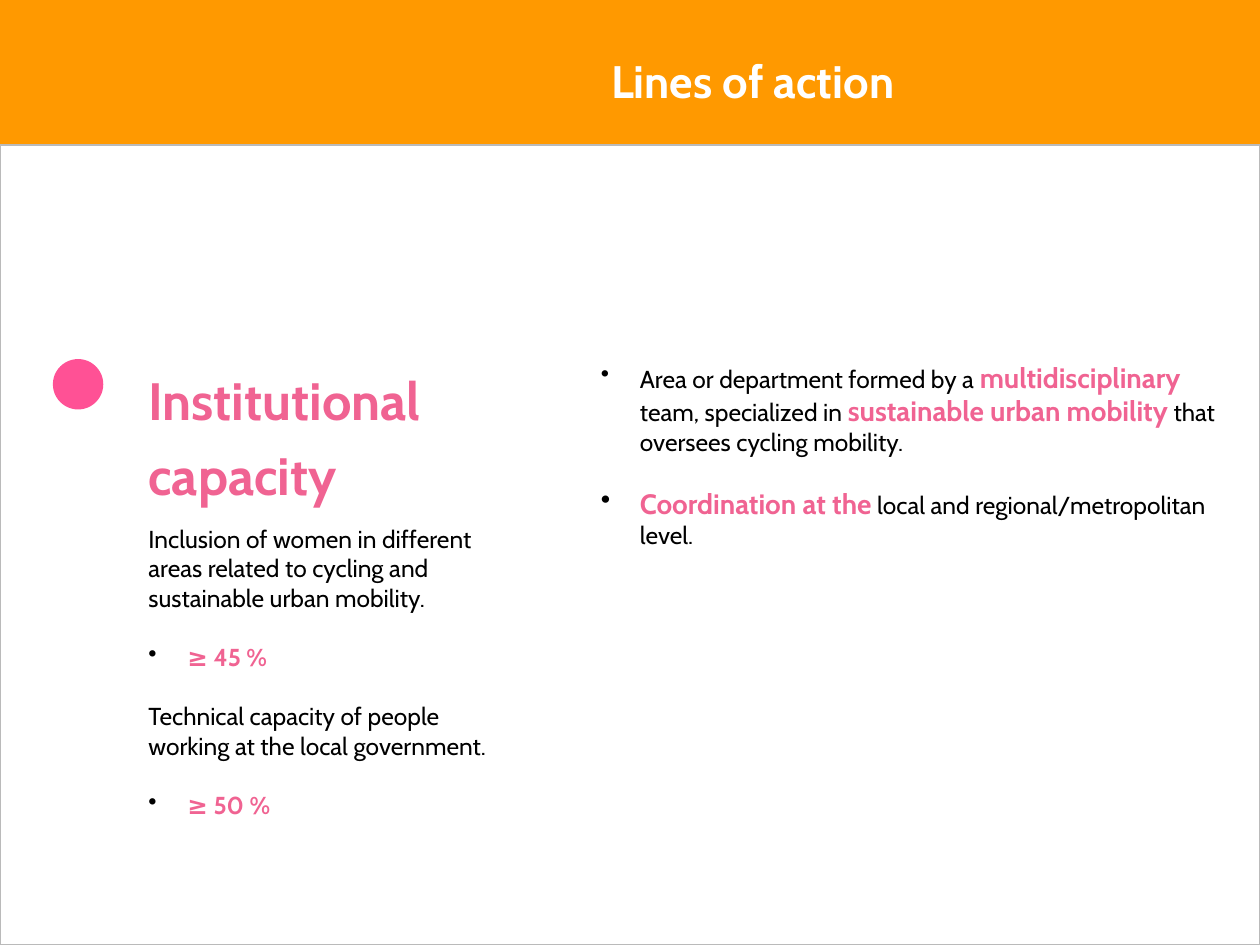
import dataclasses
import typing

import lxml.etree
import pptx
import pptx.dml.color
import pptx.enum.shapes
import pptx.enum.text
import pptx.oxml.ns
import pptx.util

COLUMNS = 100
ROWS = 75
FONT = "Cabin"
PARAGRAPH_GAP = 17
BULLET_INDENT = 0.31
COLORS = {
    "orange": "FF9900",
    "white": "FFFFFF",
    "border": "BABABA",
    "black": "000000",
    "rose": "F06392",
    "pink": "FF5195",
}


class Area(typing.NamedTuple):
    column: float
    row: float
    columns: float
    rows: float


@dataclasses.dataclass
class Run:
    text: str
    size: int = 14
    color: str = "black"
    bold: bool = False


@dataclasses.dataclass
class Paragraph:
    runs: list[Run]
    bullet: bool = False
    format: dict[str, typing.Any] = dataclasses.field(default_factory=dict)


@dataclasses.dataclass
class TextBlock:
    area: Area
    paragraphs: list[Paragraph]
    vertical_margin: float = 0.05


@dataclasses.dataclass
class Figure:
    kind: pptx.enum.shapes.MSO_SHAPE
    area: Area
    fill: str
    line: str | None = None


FIGURES = [
    Figure(pptx.enum.shapes.MSO_SHAPE.RECTANGLE, Area(0, 0, 100, 75), "orange"),
    Figure(pptx.enum.shapes.MSO_SHAPE.RECTANGLE, Area(0, 11.5, 100, 63.5), "white", "border"),
    Figure(pptx.enum.shapes.MSO_SHAPE.OVAL, Area(4.2, 28.5, 4, 4), "pink"),
]

TEXT_BLOCKS = [
    TextBlock(Area(10.8, 41.1, 30.3, 27.4), [
        Paragraph([Run("Inclusion of women in different areas related to cycling and sustainable urban mobility.")]),
        Paragraph([Run("≥ 45 %", color="rose", bold=True)], bullet=True),
        Paragraph([Run("Technical capacity of people working at the local government.")]),
        Paragraph([Run("≥ 50 %", color="rose", bold=True)], bullet=True),
    ]),
    TextBlock(Area(46.7, 28.1, 50.8, 33.7), [
        Paragraph([
            Run("Area or department formed by a "),
            Run("multidisciplinary", 16, "rose", True),
            Run(" team, specialized in "),
            Run("sustainable urban mobility", 16, "rose", True),
            Run(" that oversees cycling mobility."),
        ], bullet=True),
        Paragraph([
            Run("Coordination at the", 16, "rose", True),
            Run(" local and regional/metropolitan level."),
        ], bullet=True),
    ]),
    TextBlock(Area(10.8, 27.2, 29.5, 12.4), [
        Paragraph([Run("Institutional capacity", 30, "rose", True)], format={"line_spacing": 1.2}),
    ], vertical_margin=0.1),
    TextBlock(Area(19.5, 3.7, 80.5, 5.4), [
        Paragraph([Run("Lines of action", 26, "white", True)],
                  format={"alignment": pptx.enum.text.PP_ALIGN.CENTER}),
    ]),
]


def color_of(name: str) -> pptx.dml.color.RGBColor:
    return pptx.dml.color.RGBColor.from_string(COLORS[name])


def apply_format(target: typing.Any, values: dict[str, typing.Any]) -> None:
    for name, value in values.items():
        setattr(target, name, value)


def place(presentation: typing.Any, area: Area) -> tuple[int, int, int, int]:
    column_width = presentation.slide_width / COLUMNS
    row_height = presentation.slide_height / ROWS
    return (
        round(area.column * column_width),
        round(area.row * row_height),
        round(area.columns * column_width),
        round(area.rows * row_height),
    )


def draw_figure(presentation: typing.Any, slide: typing.Any, figure: Figure) -> None:
    shape = slide.shapes.add_shape(figure.kind, *place(presentation, figure.area))
    shape.shadow.inherit = False
    shape.fill.solid()
    shape.fill.fore_color.rgb = color_of(figure.fill)
    if figure.line:
        shape.line.color.rgb = color_of(figure.line)
        shape.line.width = pptx.util.Pt(1)
    else:
        shape.line.fill.background()


def add_bullet(paragraph: typing.Any) -> None:
    qualified = pptx.oxml.ns.qn
    properties = paragraph._p.get_or_add_pPr()
    indent = pptx.util.Inches(BULLET_INDENT)
    properties.set("marL", str(indent))
    properties.set("indent", str(-indent))
    bullet_color = lxml.etree.SubElement(properties, qualified("a:buClr"))
    lxml.etree.SubElement(bullet_color, qualified("a:srgbClr"), val=COLORS["black"])
    lxml.etree.SubElement(properties, qualified("a:buChar"), char="•")


def draw_text(presentation: typing.Any, slide: typing.Any, block: TextBlock) -> None:
    frame = slide.shapes.add_textbox(*place(presentation, block.area)).text_frame
    apply_format(frame, {
        "word_wrap": True,
        "vertical_anchor": pptx.enum.text.MSO_ANCHOR.TOP,
        "margin_left": pptx.util.Inches(0.1),
        "margin_right": pptx.util.Inches(0.1),
        "margin_top": pptx.util.Inches(block.vertical_margin),
        "margin_bottom": pptx.util.Inches(block.vertical_margin),
    })
    for index, content in enumerate(block.paragraphs):
        paragraph = frame.add_paragraph() if index else frame.paragraphs[0]
        if content.bullet:
            add_bullet(paragraph)
        gap = {"space_before": pptx.util.Pt(PARAGRAPH_GAP)} if index else {}
        apply_format(paragraph, gap | content.format)
        for item in content.runs:
            run = paragraph.add_run()
            run.text = item.text
            apply_format(run.font, {
                "name": FONT,
                "size": pptx.util.Pt(item.size),
                "bold": item.bold,
            })
            run.font.color.rgb = color_of(item.color)


def main() -> None:
    presentation = pptx.Presentation()
    presentation.slide_width = pptx.util.Inches(10)
    presentation.slide_height = pptx.util.Inches(7.5)
    slide = presentation.slides.add_slide(presentation.slide_layouts[6])
    for figure in FIGURES:
        draw_figure(presentation, slide, figure)
    for block in TEXT_BLOCKS:
        draw_text(presentation, slide, block)
    presentation.save("out.pptx")


if __name__ == "__main__":
    main()
